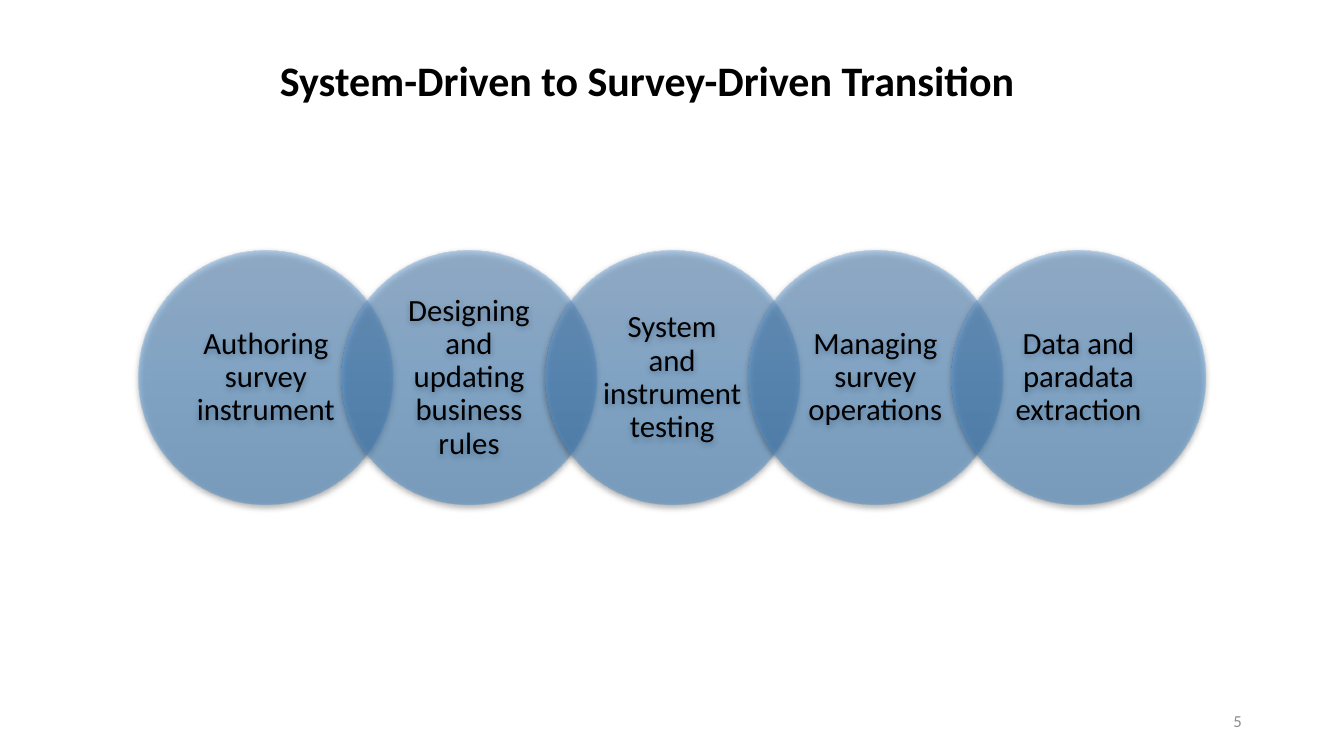
from typing import NamedTuple

import lxml.etree
import pptx
import pptx.dml.color
import pptx.enum.shapes
import pptx.enum.text
import pptx.oxml.ns
import pptx.util

Cm = pptx.util.Cm
Pt = pptx.util.Pt
RGBColor = pptx.dml.color.RGBColor
Align = pptx.enum.text.PP_ALIGN
Anchor = pptx.enum.text.MSO_ANCHOR
qn = pptx.oxml.ns.qn

BLACK = RGBColor(0x00, 0x00, 0x00)
GREY = RGBColor(0x8C, 0x8C, 0x8C)
LIGHT = RGBColor(0x71, 0xA6, 0xDB)
MID = RGBColor(0x55, 0x9B, 0xDB)
DEEP = RGBColor(0x44, 0x8A, 0xCA)

FONT = "Calibri"
SIZE = 6.4  # circle diameter, cm
STEP = 0.8 * SIZE  # neighbours overlap by a fifth
LEFT, TOP = 3.5, 6.32


class Label(NamedTuple):
    text: str
    left: float
    top: float
    width: float
    height: float
    size: int
    color: RGBColor
    align: Align
    anchor: Anchor
    bold: bool = False


LABELS = [
    Label("5", 23.93, 17.65, 7.62, 1.02, 12, GREY, Align.RIGHT, Anchor.MIDDLE),
    Label("System-Driven to Survey-Driven Transition", 1.8, 1.24, 29.03, 1.3,
          30, BLACK, Align.CENTER, Anchor.TOP, True),
]

STAGES = [
    "Authoring survey instrument",
    "Designing and updating business rules",
    "System\vand instrument testing",
    "Managing survey operations",
    "Data and paradata extraction",
]


def style(frame, size: int, color: RGBColor, align: Align, bold: bool = False) -> None:
    frame.word_wrap = True
    for para in frame.paragraphs:
        para.alignment = align
        for run in para.runs:
            run.font.name = FONT
            run.font.size = Pt(size)
            run.font.bold = bold
            run.font.color.rgb = color


def add_color(parent, color: RGBColor, alpha: int) -> None:
    tint = lxml.etree.SubElement(parent, qn("a:srgbClr"), val=str(color))
    lxml.etree.SubElement(tint, qn("a:alpha"), val=str(alpha * 1000))


def add_label(slide, label: Label) -> None:
    box = slide.shapes.add_textbox(
        Cm(label.left), Cm(label.top), Cm(label.width), Cm(label.height))
    frame = box.text_frame
    frame.text = label.text
    frame.vertical_anchor = label.anchor
    style(frame, label.size, label.color, label.align, label.bold)


def shade(shape) -> None:
    # Half-transparent gradient, running from top to bottom
    shape.fill.gradient()
    shape.fill.gradient_angle = 270
    stops = shape._element.spPr.find(".//" + qn("a:gsLst"))
    for stop in list(stops):
        stops.remove(stop)
    for place, color in ((0, LIGHT), (50, MID), (100, DEEP)):
        stop = lxml.etree.SubElement(stops, qn("a:gs"), pos=str(place * 1000))
        add_color(stop, color, 50)
    shape.line.fill.background()

    # Soft shadow below
    shape.shadow.inherit = False
    effects = shape._element.spPr.find(qn("a:effectLst"))
    drop = lxml.etree.SubElement(
        effects, qn("a:outerShdw"), blurRad=str(Pt(4.5)), dist=str(Pt(1.5)),
        dir="5400000", algn="ctr", rotWithShape="0")
    add_color(drop, BLACK, 63)


def add_stage(slide, index: int, text: str) -> None:
    disc = slide.shapes.add_shape(
        pptx.enum.shapes.MSO_SHAPE.OVAL,
        Cm(LEFT + index * STEP), Cm(TOP), Cm(SIZE), Cm(SIZE))
    shade(disc)
    frame = disc.text_frame
    frame.text = text
    frame.vertical_anchor = Anchor.MIDDLE
    frame.margin_left = frame.margin_right = Cm(0.35)
    frame.margin_top = frame.margin_bottom = Cm(0.07)
    frame.paragraphs[0].line_spacing = 0.9
    style(frame, 22, BLACK, Align.CENTER)


def main() -> None:
    deck = pptx.Presentation()
    deck.slide_width, deck.slide_height = Cm(33.87), Cm(19.05)
    slide = deck.slides.add_slide(deck.slide_layouts[6])

    # Page number and title
    for label in LABELS:
        add_label(slide, label)

    # Chain of overlapping circles
    for index, text in enumerate(STAGES):
        add_stage(slide, index, text)

    deck.save("out.pptx")


if __name__ == "__main__":
    main()
